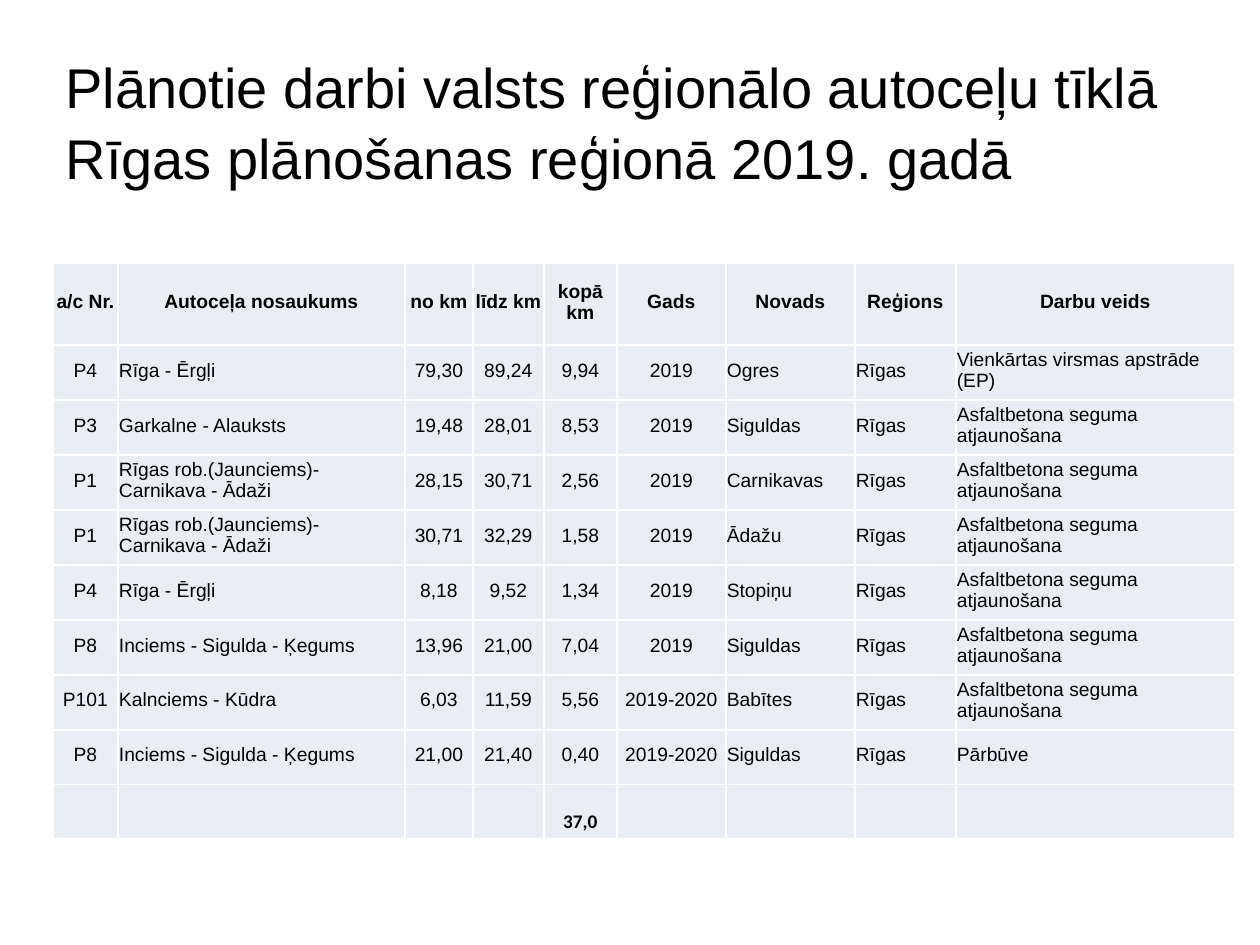
from lxml import etree
from pptx import Presentation, util as u
from pptx.dml.color import RGBColor
from pptx.enum import text
from pptx.oxml import ns

PX = 914400 / 126  # EMU in one px
THEME = {
    "ink": RGBColor.from_string("000000"),
    "cell": RGBColor.from_string("E9EDF4"),
    "rule": "FFFFFF",
    "title": {"name": "Arial", "size": u.Pt(32), "bold": False},
    "head": {"name": "Arial", "size": u.Pt(11), "bold": True},
    "body": {"name": "Arial", "size": u.Pt(11), "bold": False},
    "total": {"name": "Calibri", "size": u.Pt(11), "bold": True},
}
LEFT, MID = text.PP_ALIGN.LEFT, text.PP_ALIGN.CENTER

TITLE = ("Plānotie darbi valsts reģionālo autoceļu tīklā "
         "Rīgas plānošanas reģionā 2019. gadā")
HEAD = ["a/c Nr.", "Autoceļa nosaukums", "no km", "līdz km", "kopā km",
        "Gads", "Novads", "Reģions", "Darbu veids"]
COLS = [65, 287, 68, 71, 73, 109, 129, 101, 279]
ALIGN = [MID, LEFT, MID, MID, MID, MID, LEFT, LEFT, LEFT]
RING = "Rīgas rob.(Jaunciems)- Carnikava - Ādaži"
HILL = "Inciems - Sigulda - Ķegums"
PAVE = "Asfaltbetona seguma atjaunošana"
AREA = "Rīgas"
ROADS = [
    ["P4", "Rīga - Ērgļi", "79,30", "89,24", "9,94", "2019", "Ogres", AREA,
     "Vienkārtas virsmas apstrāde (EP)"],
    ["P3", "Garkalne - Alauksts", "19,48", "28,01", "8,53", "2019", "Siguldas", AREA, PAVE],
    ["P1", RING, "28,15", "30,71", "2,56", "2019", "Carnikavas", AREA, PAVE],
    ["P1", RING, "30,71", "32,29", "1,58", "2019", "Ādažu", AREA, PAVE],
    ["P4", "Rīga - Ērgļi", "8,18", "9,52", "1,34", "2019", "Stopiņu", AREA, PAVE],
    ["P8", HILL, "13,96", "21,00", "7,04", "2019", "Siguldas", AREA, PAVE],
    ["P101", "Kalnciems - Kūdra", "6,03", "11,59", "5,56", "2019-2020", "Babītes", AREA, PAVE],
    ["P8", HILL, "21,00", "21,40", "0,40", "2019-2020", "Siguldas", AREA, "Pārbūve"],
]
TOTAL = ["", "", "", "", "37,0", "", "", "", ""]


def px(n):
    return u.Emu(round(n * PX))


def put(obj, **vals):
    for key, val in vals.items():
        setattr(obj, key, val)


def write(para, words, style, align):
    para.alignment = align
    if words:
        run = para.add_run()
        run.text = words
        put(run.font, **THEME[style])
        run.font.color.rgb = THEME["ink"]


def edge(cell):
    """Draw a thin rule on all four sides of a cell."""
    props = cell._tc.get_or_add_tcPr()
    for side in ("lnL", "lnR", "lnT", "lnB"):
        line = etree.SubElement(props, ns.qn("a:" + side), w=str(u.Pt(1)))
        fill = etree.SubElement(line, ns.qn("a:solidFill"))
        etree.SubElement(fill, ns.qn("a:srgbClr"), val=THEME["rule"])


def add_title(slide, x, y, w, h):
    shape = slide.shapes.title
    put(shape, left=px(x), top=px(y), width=px(w), height=px(h))
    frame = shape.text_frame
    put(frame, word_wrap=True, auto_size=text.MSO_AUTO_SIZE.NONE,
        vertical_anchor=text.MSO_ANCHOR.MIDDLE)
    para = frame.paragraphs[0]
    write(para, TITLE, "title", LEFT)
    para.line_spacing = 1.06


def add_roads(slide, x, y, w, h):
    rows = [HEAD, *ROADS, TOTAL]
    last = len(rows) - 1
    table = slide.shapes.add_table(
        len(rows), len(HEAD), px(x), px(y), px(w), px(h)).table
    put(table, first_row=False, horz_banding=False)
    for col, wide in zip(table.columns, COLS):
        col.width = px(wide)

    # Heading and total rows differ from the even rows between
    tall = [82] + [55] * len(ROADS) + [h - 82 - 55 * len(ROADS)]
    for r, row in enumerate(rows):
        table.rows[r].height = px(tall[r])
        style = {0: "head", last: "total"}.get(r, "body")
        anchor = text.MSO_ANCHOR.BOTTOM if r == last else text.MSO_ANCHOR.MIDDLE
        for c, words in enumerate(row):
            cell = table.cell(r, c)
            put(cell, margin_left=px(1), margin_right=px(1), margin_top=px(1),
                margin_bottom=px(5), vertical_anchor=anchor)
            edge(cell)
            cell.fill.solid()
            cell.fill.fore_color.rgb = THEME["cell"]
            write(cell.text_frame.paragraphs[0], words, style,
                  MID if r == 0 else ALIGN[c])


def main():
    deck = Presentation()
    put(deck, slide_width=px(1260), slide_height=px(945))
    slide = deck.slides.add_slide(deck.slide_layouts[5])
    add_title(slide, 53, 45, 1153, 149)
    add_roads(slide, 53, 263, sum(COLS), 576)
    deck.save("out.pptx")


if __name__ == "__main__":
    main()
